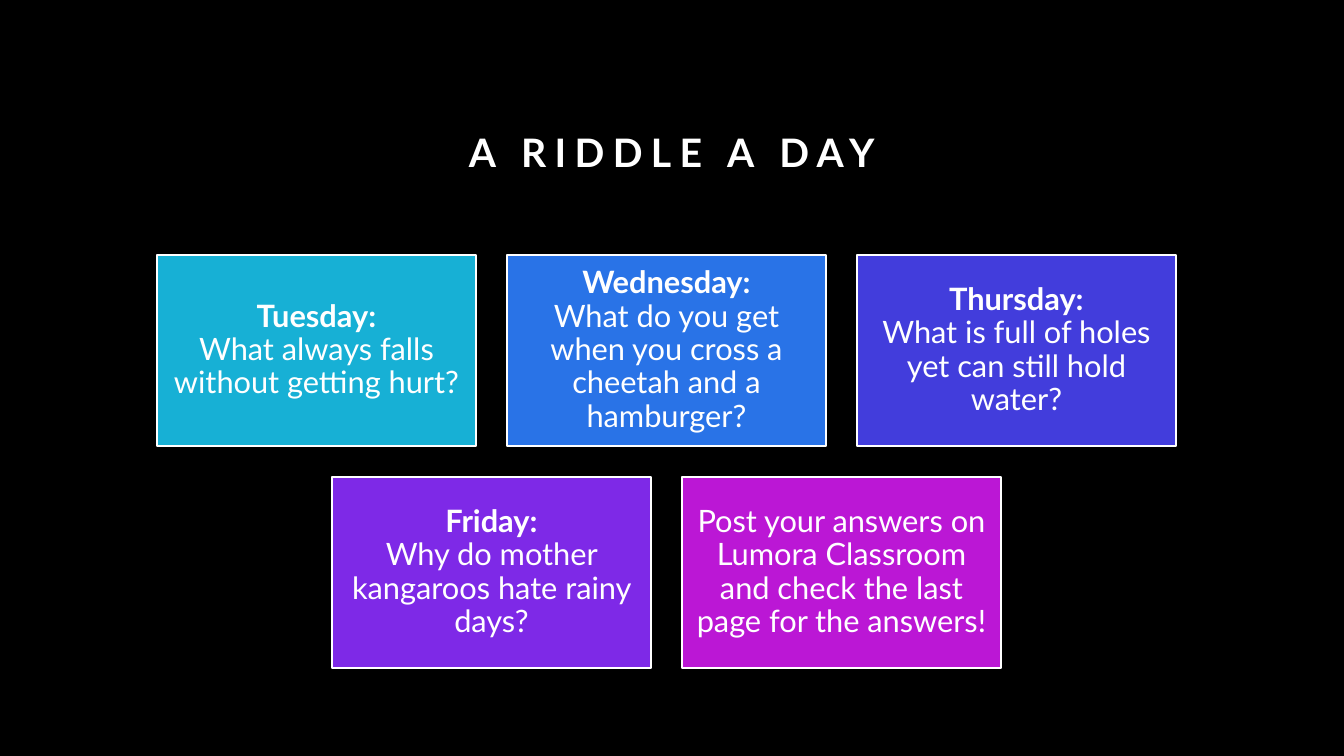
from dataclasses import dataclass

from pptx import Presentation
from pptx.dml.color import RGBColor
from pptx.enum.shapes import MSO_SHAPE as Shape
from pptx.enum.text import MSO_ANCHOR as Anchor, PP_ALIGN as Align
from pptx.util import Emu, Pt

EMU_PER_INCH = 914400
PX_PER_INCH = 100.8


@dataclass(frozen=True)
class Theme:
    font: str = "Lato"
    background: str = "000000"
    ink: str = "FFFFFF"
    cards: tuple = ("17B0D5", "2973E7", "423DDC", "7E29E7", "BB17D5")
    title_size: int = 28
    title_tracking: int = 6
    card_size: int = 22
    border: int = 1


THEME = Theme()

RIDDLES = [
    ("Tuesday:", "What always falls without getting hurt?"),
    ("Wednesday:", "What do you get when you cross a cheetah and a hamburger?"),
    ("Thursday:", "What is full of holes yet can still hold water?"),
    ("Friday:", "Why do mother kangaroos hate rainy days?"),
    ("", "Post your answers on Lumora Classroom and check the last page for the answers!"),
]


def px(length):
    return Emu(round(length * EMU_PER_INCH / PX_PER_INCH))


def paint(fill, color):
    fill.solid()
    fill.fore_color.rgb = RGBColor.from_string(color)


def style_paragraph(paragraph, size, line_spacing):
    paragraph.alignment = Align.CENTER
    paragraph.line_spacing = line_spacing
    paragraph.font.name = THEME.font
    paragraph.font.size = Pt(size)
    paragraph.font.color.rgb = RGBColor.from_string(THEME.ink)


def add_title(slide, text, left, top, width, height):
    frame = slide.shapes.add_textbox(px(left), px(top), px(width), px(height)).text_frame
    frame.word_wrap = True
    frame.vertical_anchor = Anchor.BOTTOM
    heading = frame.paragraphs[0]
    style_paragraph(heading, THEME.title_size, 1.2)
    heading.font.bold = True
    letters = heading.add_run()
    letters.text = text
    letters.font._element.set("spc", str(THEME.title_tracking * 100))


def add_card(slide, day, riddle, color, left, top, width, height):
    card = slide.shapes.add_shape(Shape.RECTANGLE, px(left), px(top), px(width), px(height))
    card.shadow.inherit = False
    paint(card.fill, color)
    paint(card.line.fill, THEME.ink)
    card.line.width = Pt(THEME.border)

    frame = card.text_frame
    frame.word_wrap = True
    frame.vertical_anchor = Anchor.MIDDLE
    frame.margin_left = frame.margin_right = px(9)
    frame.margin_top = frame.margin_bottom = px(9)
    paragraph = frame.paragraphs[0]
    style_paragraph(paragraph, THEME.card_size, 0.9)
    if day:
        day_run = paragraph.add_run()
        day_run.text = day
        day_run.font.bold = True
        paragraph.add_line_break()
    paragraph.add_run().text = riddle


def add_riddle_grid(slide, riddles, left, top, width, height, columns=3, gap=31):
    """Fill rows of equal cards, centring a row that is not full."""
    rows = -(-len(riddles) // columns)
    card_width = (width - gap * (columns - 1)) // columns
    card_height = (height - gap * (rows - 1)) // rows
    for index, (day, riddle) in enumerate(riddles):
        row, column = divmod(index, columns)
        in_row = min(columns, len(riddles) - row * columns)
        indent = (columns - in_row) * (card_width + gap) / 2
        add_card(slide, day, riddle, THEME.cards[index],
                 left + indent + column * (card_width + gap),
                 top + row * (card_height + gap),
                 card_width, card_height)


def main():
    deck = Presentation()
    deck.slide_width, deck.slide_height = px(1344), px(756)
    slide = deck.slides.add_slide(deck.slide_layouts[6])
    paint(slide.background.fill, THEME.background)
    add_title(slide, "A RIDDLE A DAY", 168, 84, 1008, 96)
    add_riddle_grid(slide, RIDDLES, 157, 255, 1019, 414)
    deck.save("out.pptx")


if __name__ == "__main__":
    main()
